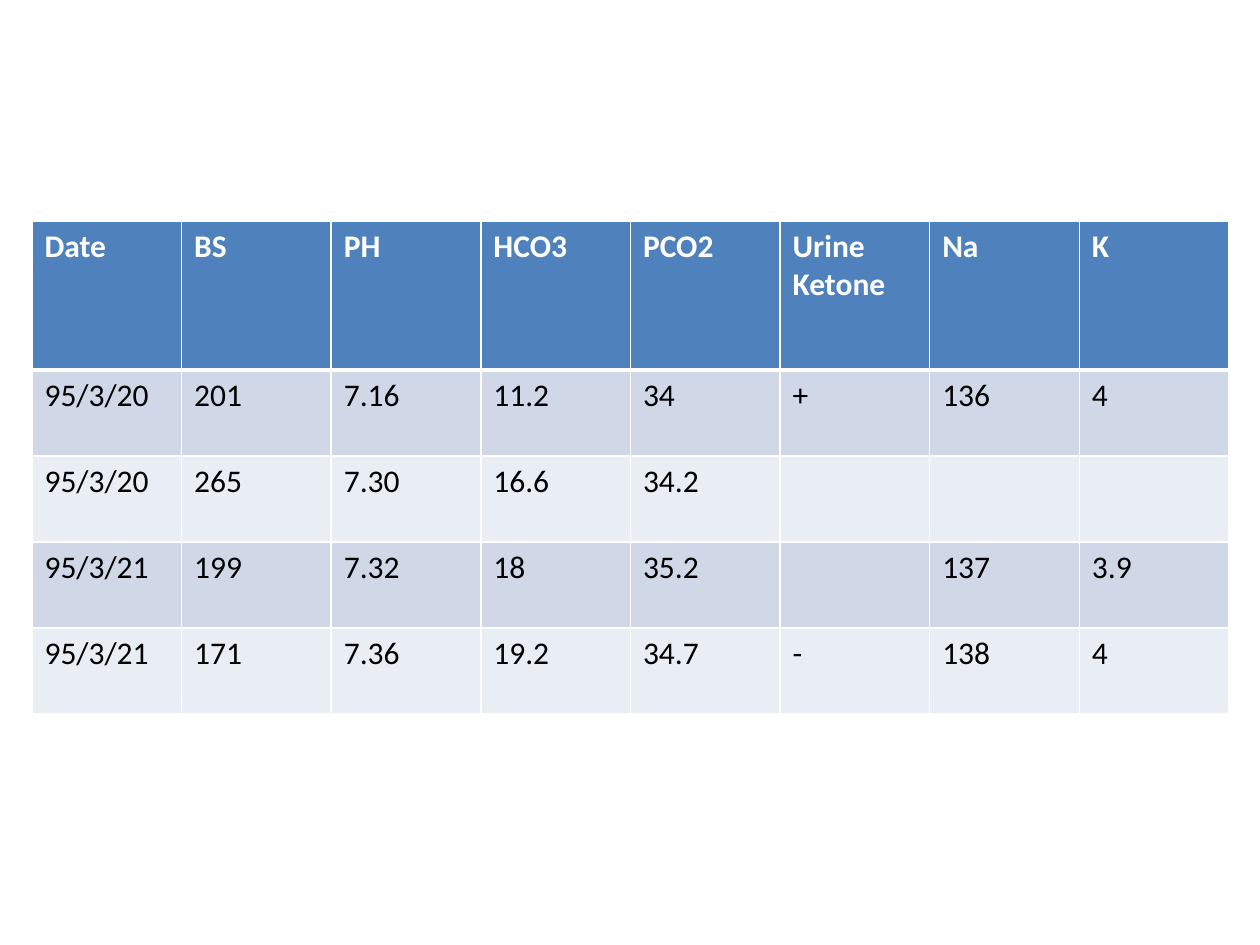
from lxml import etree
from pptx import Presentation
from pptx import util as u
from pptx.dml.color import RGBColor
from pptx.oxml import ns

PX = 914400 / 126
HEADER_BLUE = RGBColor(0x4F, 0x81, 0xBD)
BAND_DARK = RGBColor(0xD0, 0xD8, 0xE8)
BAND_LIGHT = RGBColor(0xE9, 0xED, 0xF4)
WHITE = RGBColor(0xFF, 0xFF, 0xFF)
BLACK = RGBColor(0x00, 0x00, 0x00)

LAB_RESULTS = [
    ["Date", "BS", "PH", "HCO3", "PCO2", "Urine Ketone", "Na", "K"],
    ["95/3/20", "201", "7.16", "11.2", "34", "+", "136", "4"],
    ["95/3/20", "265", "7.30", "16.6", "34.2", "", "", ""],
    ["95/3/21", "199", "7.32", "18", "35.2", "", "137", "3.9"],
    ["95/3/21", "171", "7.36", "19.2", "34.7", "-", "138", "4"],
]
HEADER_HEIGHT, ROW_HEIGHT = 149, 86


def px(length):
    return u.Emu(round(length * PX))


def add_borders(cell, widths):
    """Draw white cell borders; widths maps each side to points."""
    properties = cell._tc.get_or_add_tcPr()
    for position, (side, width) in enumerate(widths.items()):
        line = etree.Element(ns.qn(f"a:ln{side}"), w=str(u.Pt(width)))
        fill = etree.SubElement(line, ns.qn("a:solidFill"))
        etree.SubElement(fill, ns.qn("a:srgbClr"), val=str(WHITE))
        properties.insert(position, line)


# Slide
prs = Presentation()
prs.slide_width, prs.slide_height = px(1260), px(945)
slide = prs.slides.add_slide(prs.slide_layouts[6])

# Table grid
row_count, column_count = len(LAB_RESULTS), len(LAB_RESULTS[0])
table_height = HEADER_HEIGHT + (row_count - 1) * ROW_HEIGHT
results = slide.shapes.add_table(
    row_count, column_count, px(32), px(221), px(1197), px(table_height)
).table
for column in results.columns:
    column.width = px(1197 / column_count)
for r, row in enumerate(results.rows):
    row.height = px(ROW_HEIGHT if r else HEADER_HEIGHT)

# Cells
for r, values in enumerate(LAB_RESULTS):
    is_header = r == 0
    row_fill = HEADER_BLUE if is_header else (BAND_DARK if r % 2 else BAND_LIGHT)
    borders = {"L": 1, "R": 1, "T": 3 if r == 1 else 1, "B": 3 if is_header else 1}
    for c, value in enumerate(values):
        cell = results.cell(r, c)
        cell.fill.solid()
        cell.fill.fore_color.rgb = row_fill
        add_borders(cell, borders)
        paragraph = cell.text_frame.paragraphs[0]
        paragraph.font.size = u.Pt(18)
        if value:
            run = paragraph.add_run()
            run.text = value
            run.font.name = "Calibri"
            run.font.size = u.Pt(18)
            run.font.bold = is_header
            run.font.color.rgb = WHITE if is_header else BLACK

prs.save("out.pptx")
